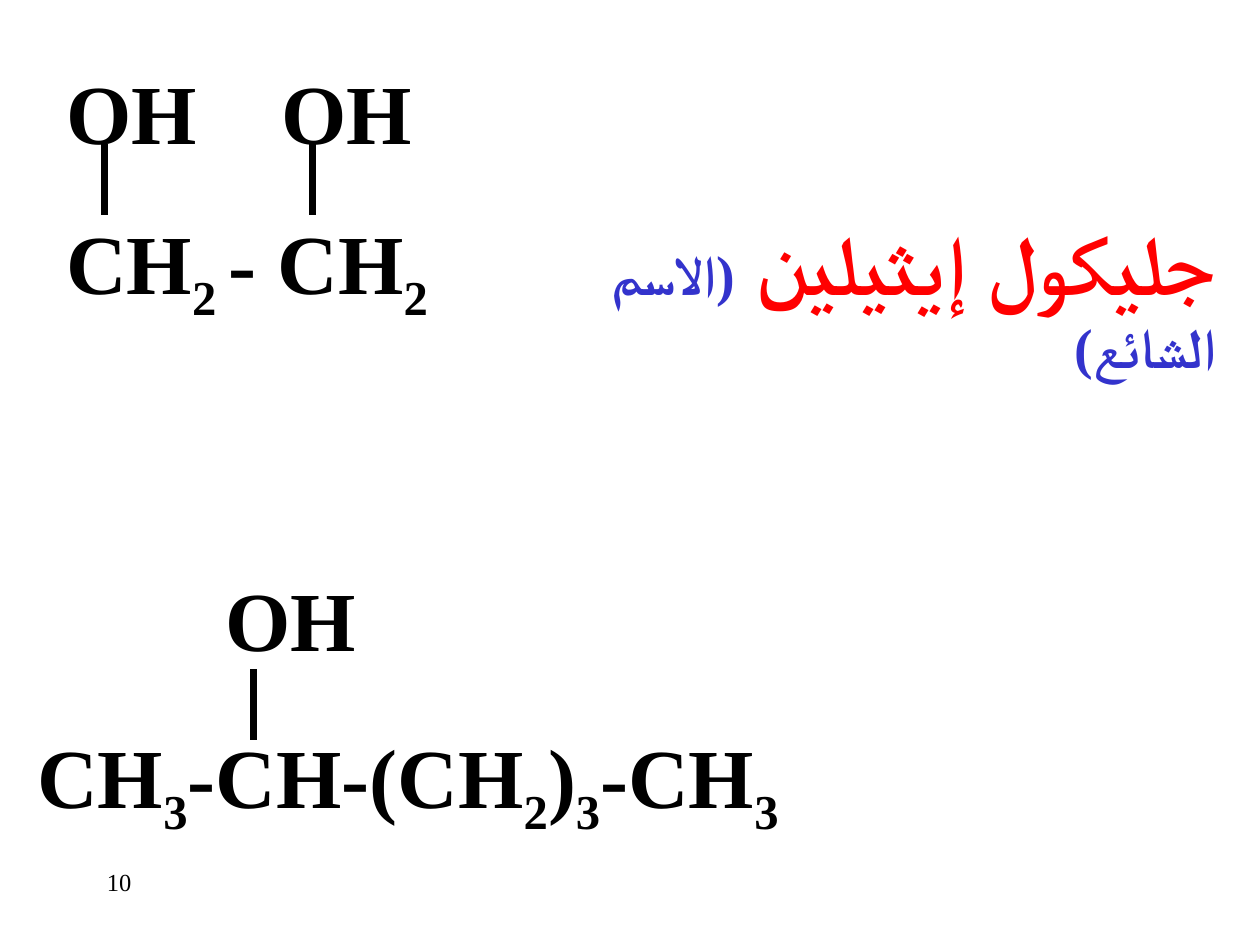
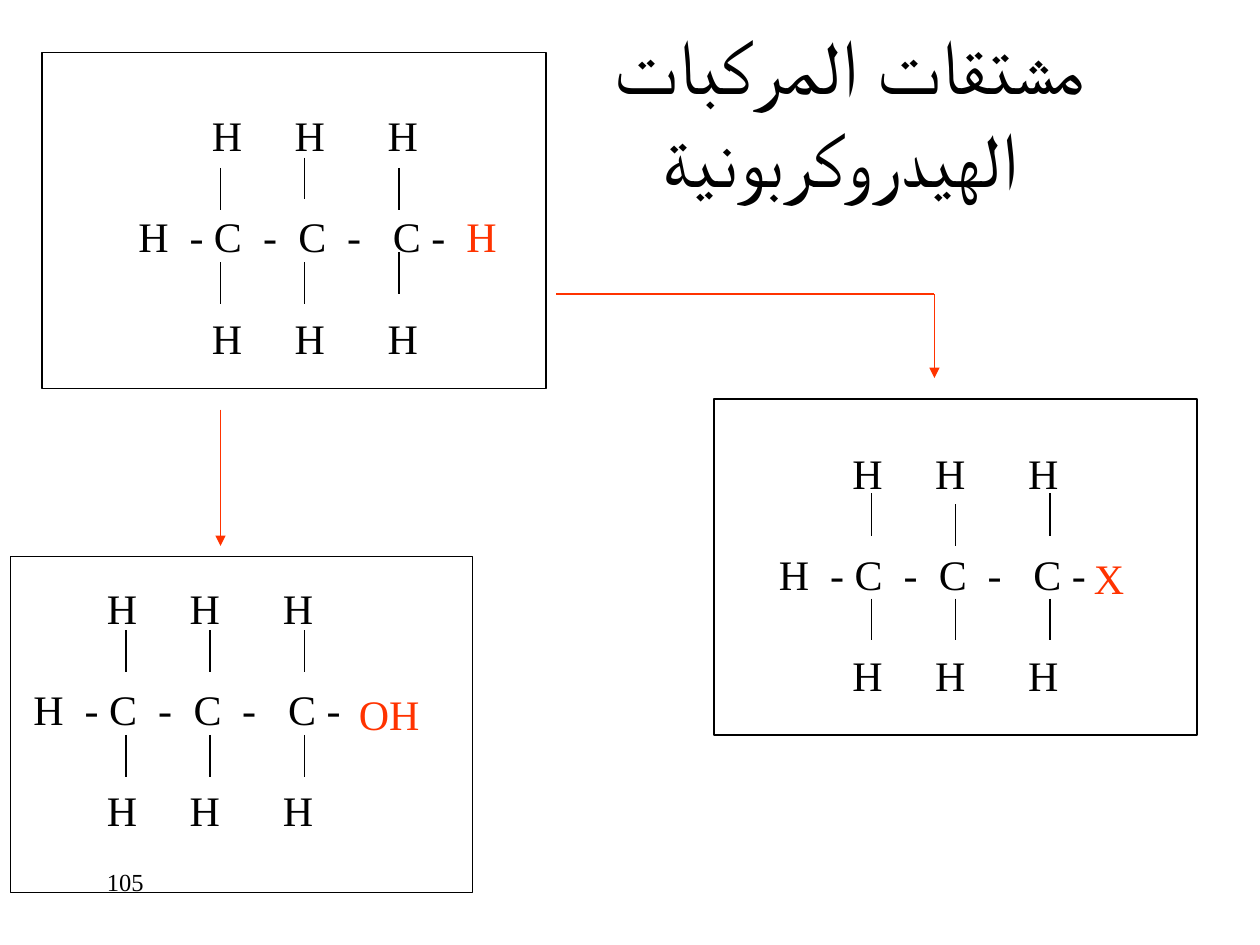
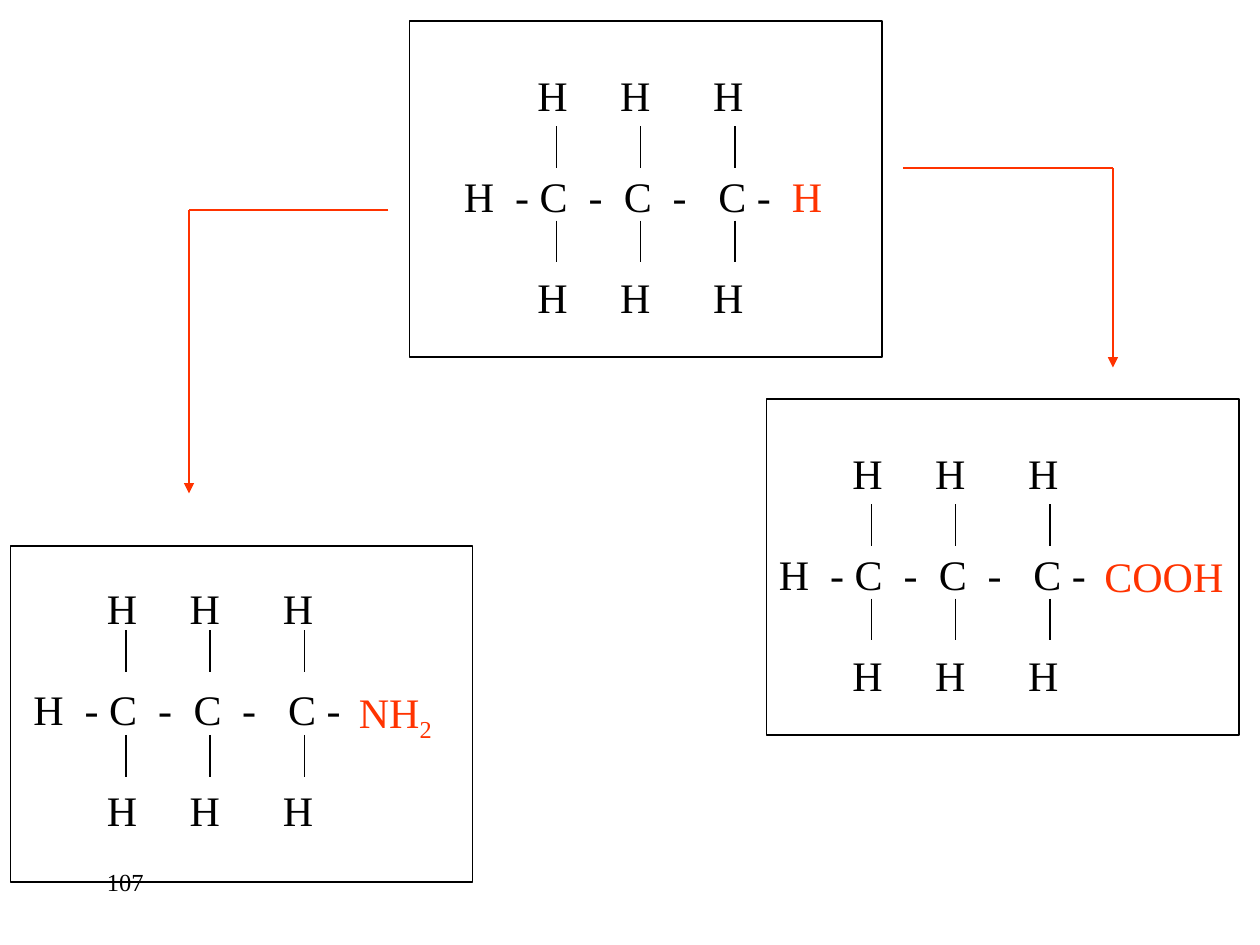
from lxml.etree import SubElement
from pptx import Presentation
from pptx.dml.color import RGBColor
from pptx.enum.shapes import MSO_CONNECTOR, MSO_SHAPE
from pptx.enum.text import MSO_ANCHOR, MSO_AUTO_SIZE, PP_ALIGN
from pptx.oxml.ns import qn
from pptx.util import Pt

PX = 9525
FONT = "Times New Roman"
COLORS = {"ink": "000000", "accent": "FF3300", "name": "FF0000", "note": "3333CC"}
TITLE_ONLY, BLANK = 5, 6

NUMBER_BOX = (72, 656, 200, 48)
BOND_LENGTH = 32
BOND_OFFSETS = (0, 64, 136)
MOLECULE_SIZE = (432, 202)
HYDROGEN_ROW, HYDROGEN_STOPS = "\tH\tH\tH", (88, 151, 222)
CARBON_ROW, CARBON_STOPS = "\tH\t- C\t-\tC\t-\tC -", (32, 71, 127, 154, 191, 226, 282)
ROW_GAP = 29

FORMULAS = [
    ((41, 41, 318, 115), ["OH\tOH"], (164,)),
    ((41, 156, 318, 84), ["CH", "2 ", "- CH", "2"], ()),
    ((162, 428, 129, 129), ["OH"], ()),
    ((19, 547, 605, 84), ["CH", "3", "-CH-(CH", "2", ")", "3", "-CH", "3"], ()),
]
FORMULA_BONDS = [(80, 110, 54), (238, 110, 54), (193, 510, 54)]
COMMON_NAME_BOX = (382, 186, 554, 78)
COMMON_NAME = [("جليكول إيثيلين ", 48, "name"), ("(الاسم الشائع)", 32, "note")]

TITLE_BOX = (232, 24, 816, 120)
TITLE_LINES = ("مشتقات المركبات ", "الهيدروكربونية")

DERIVATIVES = [
    {
        "number": "105",
        "title": TITLE_LINES,
        "molecules": [
            {"at": (64, 79), "bond_x": 168, "up": (128, 120, 128), "down": (200, 200, 192),
             "frame": (32, 40, 384, 256)},
            {"at": (552, 336), "bond_x": 664, "up": (376, 384, 376), "down": (456,) * 3,
             "frame": (544, 304, 368, 256), "group": ["X"], "group_box": (824, 416, 80, 48)},
            {"at": (-16, 439), "bond_x": 96, "up": (480,) * 3, "down": (560,) * 3,
             "frame": (8, 424, 352, 256), "group": ["OH"], "group_box": (264, 520, 80, 48)},
        ],
        "arrows": [[(168, 312), (168, 416)], [(424, 224), (712, 224), (712, 288)]],
    },
    {
        "number": "107",
        "title": None,
        "molecules": [
            {"at": (312, 48), "bond_x": 424, "up": (96,) * 3, "down": (168,) * 3,
             "frame": (312, 16, 360, 256)},
            {"at": (552, 336), "bond_x": 664, "up": (384,) * 3, "down": (456,) * 3,
             "frame": (584, 304, 360, 256), "group": ["COOH"], "group_box": (832, 415, 112, 106)},
            {"at": (-16, 439), "bond_x": 96, "up": (480,) * 3, "down": (560,) * 3,
             "frame": (8, 416, 352, 256), "group": ["NH", "2"], "group_box": (264, 518, 96, 106)},
        ],
        "arrows": [[(688, 128), (848, 128), (848, 280)], [(296, 160), (144, 160), (144, 376)]],
    },
]


def scaled(values):
    return [value * PX for value in values]


def rgb(color):
    return RGBColor.from_string(COLORS[color])


def add_box(page, place):
    box = page.shapes.add_textbox(*scaled(place))
    box.text_frame.word_wrap = True
    return box.text_frame


def add_span(para, text, size, color="ink", bold=False, lowered=False):
    span = para.add_run()
    span.text = text
    span.font.name = FONT
    span.font.size = Pt(size)
    span.font.bold = bold
    span.font.color.rgb = rgb(color)
    properties = span._r.get_or_add_rPr()
    SubElement(properties, qn("a:cs"), typeface=FONT)
    if lowered:
        properties.set("baseline", "-25000")


def add_formula(para, pieces, size, color="ink", bold=False):
    """Write formula pieces, every second one as a subscript."""
    for index, piece in enumerate(pieces):
        add_span(para, piece, size, color, bold, lowered=index % 2 == 1)


def set_tabs(para, stops):
    tabs = SubElement(para._p.get_or_add_pPr(), qn("a:tabLst"))
    for stop in stops:
        SubElement(tabs, qn("a:tab"), pos=str(stop * PX), algn="l")


def set_right_to_left(para, alignment):
    para.alignment = alignment
    para._p.get_or_add_pPr().set("rtl", "1")


def add_line(page, start, end, color="ink", width=0.75, head=False):
    line = page.shapes.add_connector(MSO_CONNECTOR.STRAIGHT, *scaled(start + end))
    line.line.color.rgb = rgb(color)
    line.line.width = Pt(width)
    if head:
        SubElement(line.line._get_or_add_ln(), qn("a:tailEnd"), type="triangle")
    SubElement(line._element.spPr, qn("a:effectLst"))


def add_bond(page, x, y, length=BOND_LENGTH, width=0.75):
    add_line(page, (x, y), (x, y + length), width=width)


def add_arrow(page, points):
    for index, (start, end) in enumerate(zip(points, points[1:])):
        add_line(page, start, end, "accent", head=index == len(points) - 2)


def add_frame(page, place):
    frame = page.shapes.add_shape(MSO_SHAPE.RECTANGLE, *scaled(place))
    frame.shadow.inherit = False
    frame.fill.background()
    frame.line.color.rgb = rgb("ink")
    frame.line.width = Pt(0.75)


def add_number(page, number):
    add_span(add_box(page, NUMBER_BOX).paragraphs[0], number, 14)


def add_title(page, lines):
    title = page.shapes.title
    title.left, title.top, title.width, title.height = scaled(TITLE_BOX)
    frame = title.text_frame
    frame.word_wrap = True
    frame.auto_size = MSO_AUTO_SIZE.NONE
    frame.vertical_anchor = MSO_ANCHOR.MIDDLE
    para = frame.paragraphs[0]
    set_right_to_left(para, PP_ALIGN.CENTER)
    for index, line in enumerate(lines):
        if index:
            para.add_line_break()
        add_span(para, line, 44)


def add_molecule(page, molecule):
    """Draw a three-carbon chain with its bonds, frame and end group."""
    frame = add_box(page, molecule["at"] + MOLECULE_SIZE)
    rows = [(HYDROGEN_ROW, HYDROGEN_STOPS), (CARBON_ROW, CARBON_STOPS),
            (HYDROGEN_ROW, HYDROGEN_STOPS)]
    for index, (text, stops) in enumerate(rows):
        para = frame.add_paragraph() if index else frame.paragraphs[0]
        if index:
            para.space_before = Pt(ROW_GAP)
        set_tabs(para, stops)
        add_span(para, text, 24)
        if text == CARBON_ROW and "group" not in molecule:
            add_span(para, "\tH", 24, "accent")
    for offset, up, down in zip(BOND_OFFSETS, molecule["up"], molecule["down"]):
        for y in (up, down):
            add_bond(page, molecule["bond_x"] + offset, y)
    if "group" in molecule:
        para = add_box(page, molecule["group_box"]).paragraphs[0]
        add_formula(para, molecule["group"], 24, "accent")
    add_frame(page, molecule["frame"])


def build_formulas(deck):
    page = deck.slides.add_slide(deck.slide_layouts[BLANK])
    add_number(page, "10")
    for place, pieces, stops in FORMULAS:
        para = add_box(page, place).paragraphs[0]
        if stops:
            set_tabs(para, stops)
        add_formula(para, pieces, 48, bold=True)
    for x, y, length in FORMULA_BONDS:
        add_bond(page, x, y, length, 4)
    frame = add_box(page, COMMON_NAME_BOX)
    frame.vertical_anchor = MSO_ANCHOR.MIDDLE
    para = frame.paragraphs[0]
    set_right_to_left(para, PP_ALIGN.RIGHT)
    for text, size, color in COMMON_NAME:
        add_span(para, text, size, color, bold=True)


def build_derivatives(deck, content):
    layout = TITLE_ONLY if content["title"] else BLANK
    page = deck.slides.add_slide(deck.slide_layouts[layout])
    add_number(page, content["number"])
    for molecule in content["molecules"]:
        add_molecule(page, molecule)
    if content["title"]:
        add_title(page, content["title"])
    for points in content["arrows"]:
        add_arrow(page, points)


def main():
    deck = Presentation()
    deck.slide_width, deck.slide_height = scaled((960, 720))
    build_formulas(deck)
    for content in DERIVATIVES:
        build_derivatives(deck, content)
    deck.save("out.pptx")


if __name__ == "__main__":
    main()
